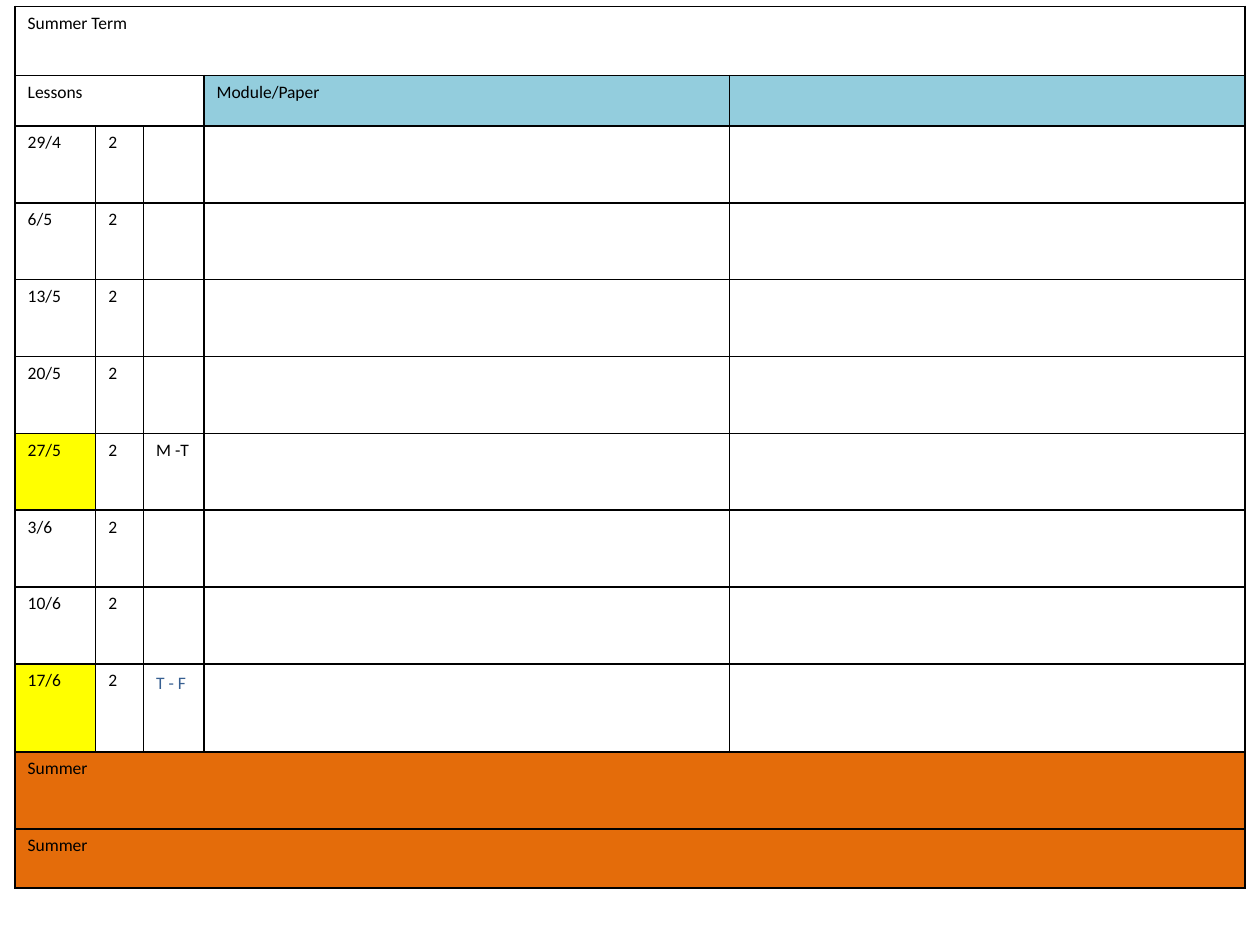
from dataclasses import dataclass

from lxml import etree
from pptx import Presentation
from pptx import util as u
from pptx.dml.color import RGBColor
from pptx.oxml import ns


@dataclass(frozen=True)
class Theme:
    font: str = "Calibri"
    size: int = 10
    border_width: int = 1
    ink: str = "000000"
    accent_ink: str = "365F91"
    plain: str = "FFFFFF"
    heading: str = "93CDDD"
    marked: str = "FFFF00"
    holiday: str = "E46C0A"


class Planner:
    def __init__(self, page, theme):
        self.page = page
        self.theme = theme

    def table(self, left, top, widths, heights):
        table = self.page.shapes.add_table(
            len(heights), len(widths), u.Inches(left), u.Inches(top),
            u.Inches(sum(widths)), u.Inches(sum(heights))).table
        table.first_row = table.horz_banding = False
        for column, width in zip(table.columns, widths):
            column.width = u.Inches(width)
        for row, height in zip(table.rows, heights):
            row.height = u.Inches(height)
        for cell in table.iter_cells():
            cell.margin_bottom = u.Inches(0.03)
            self.border(cell)
            self.fill(cell, self.theme.plain)
        return table

    def border(self, cell):
        properties = cell._tc.get_or_add_tcPr()
        for side in ("a:lnL", "a:lnR", "a:lnT", "a:lnB"):
            line = etree.SubElement(properties, ns.qn(side),
                                    w=str(u.Pt(self.theme.border_width)))
            solid = etree.SubElement(line, ns.qn("a:solidFill"))
            etree.SubElement(solid, ns.qn("a:srgbClr"), val=self.theme.ink)

    def fill(self, cell, color):
        cell.fill.solid()
        cell.fill.fore_color.rgb = RGBColor.from_string(color)

    def label(self, cell, words, color=None):
        para = cell.text_frame.paragraphs[0]
        para.text = words
        for span in para.runs:
            span.font.name = self.theme.font
            span.font.size = u.Pt(self.theme.size)
            span.font.color.rgb = RGBColor.from_string(color or self.theme.ink)

    def band(self, table, row, words, color, last_column=4):
        """Merge a row from its first column to last_column and label it."""
        for column in range(last_column + 1):
            self.fill(table.cell(row, column), color)
        table.cell(row, 0).merge(table.cell(row, last_column))
        self.label(table.cell(row, 0), words)


def main():
    theme = Theme()
    deck = Presentation()
    deck.slide_width, deck.slide_height = u.Inches(10), u.Inches(7.5)
    planner = Planner(deck.slides.add_slide(deck.slide_layouts[6]), theme)

    weeks = ["29/4", "6/5", "13/5", "20/5", "27/5", "3/6", "10/6", "17/6"]
    short_weeks = {"27/5": ("M -T", theme.ink),
                   "17/6": ("T - F", theme.accent_ink)}
    heights = [0.55, 0.4] + [0.61] * 7 + [0.7, 0.61, 0.47]
    table = planner.table(0.12, 0.05, [0.64, 0.38, 0.48, 4.17, 4.09], heights)

    planner.band(table, 0, "Summer Term", theme.plain)
    planner.band(table, 1, "Lessons", theme.plain, last_column=2)
    planner.label(table.cell(1, 3), "Module/Paper")
    for column in (3, 4):
        planner.fill(table.cell(1, column), theme.heading)

    for row, week in enumerate(weeks, start=2):
        planner.label(table.cell(row, 0), week)
        planner.label(table.cell(row, 1), "2")
        if week in short_weeks:
            planner.fill(table.cell(row, 0), theme.marked)
            planner.label(table.cell(row, 2), *short_weeks[week])
    last_week = table.cell(len(weeks) + 1, 2)
    last_week.text_frame.paragraphs[0].line_spacing = 1.15

    for row in (10, 11):
        planner.band(table, row, "Summer", theme.holiday)

    deck.save("out.pptx")


if __name__ == "__main__":
    main()
